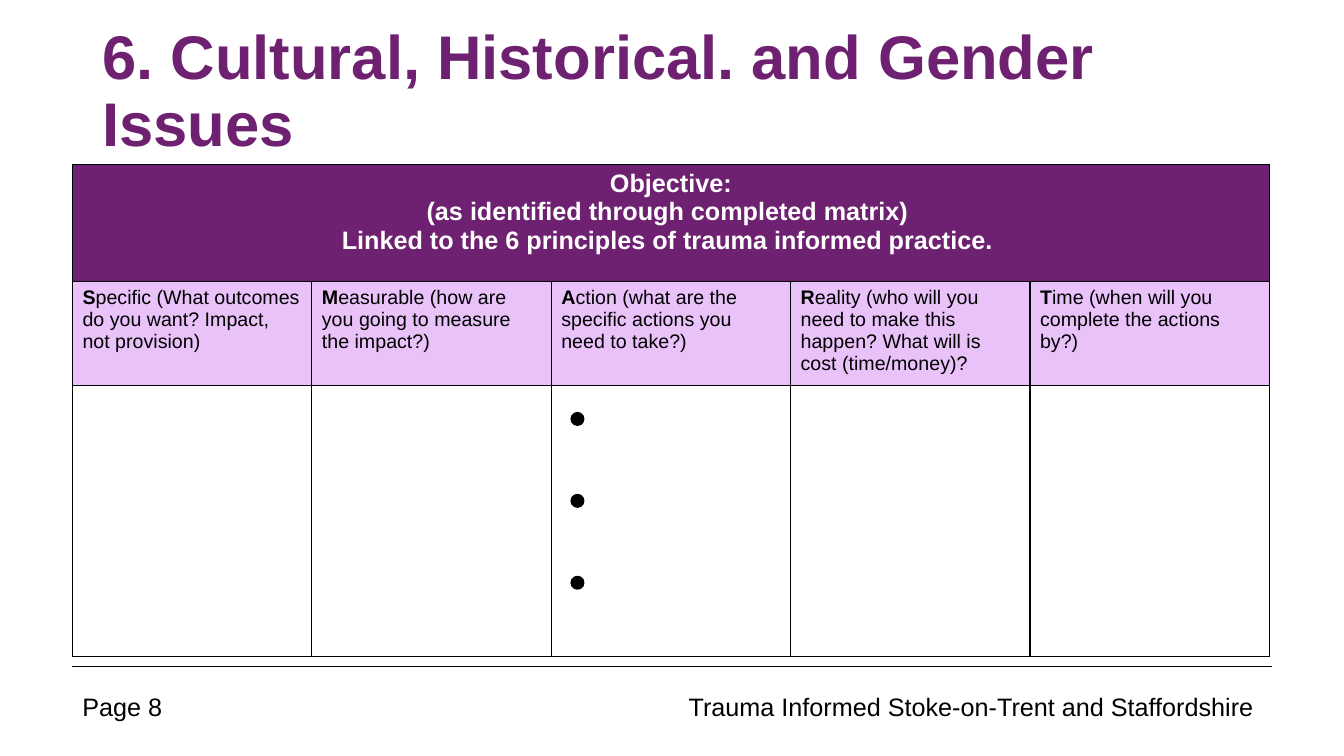
"""Build the SMART action plan slide for cultural, historical and gender issues."""
import pptx
import pptx.dml.color
import pptx.enum.shapes
import pptx.enum.text
import pptx.oxml
import pptx.oxml.ns
import pptx.util
import lxml.etree

PX = 9525
PURPLE = pptx.dml.color.RGBColor(0x6F, 0x21, 0x71)
LILAC = pptx.dml.color.RGBColor(0xEA, 0xC2, 0xFA)
WHITE = pptx.dml.color.RGBColor(0xFF, 0xFF, 0xFF)
BLACK = pptx.dml.color.RGBColor(0x00, 0x00, 0x00)
ALIGN = pptx.enum.text.PP_ALIGN
ANCHOR = pptx.enum.text.MSO_ANCHOR

LEFT, COLUMN_WIDTH = 69, 228
TABLE_TOP, ROW_HEIGHTS = 157, (111, 93, 258)
OBJECTIVE = (
    "Objective:\n(as identified through completed matrix) \n"
    "Linked to the 6 principles of trauma informed practice. "
)
SMART_HEADINGS = (
    "Specific (What outcomes do you want? Impact, not provision)",
    "Measurable (how are you going to measure the impact?)",
    "Action (what are the specific actions you need to take?)",
    "Reality (who will you need to make this happen? What will is cost (time/money)?",
    "Time (when will you complete the actions by?)",
)


def style_run(run, size, color, bold=False):
    run.font.name = "Arial"
    run.font.size = pptx.util.Pt(size)
    run.font.bold = bold
    run.font.color.rgb = color


presentation = pptx.Presentation()
presentation.slide_width = 1280 * PX
presentation.slide_height = 720 * PX
slide = presentation.slides.add_slide(presentation.slide_layouts[6])

footer_line = slide.shapes.add_connector(
    pptx.enum.shapes.MSO_CONNECTOR.STRAIGHT, LEFT * PX, 635 * PX, 1211 * PX, 635 * PX
)
footer_line.line.color.rgb = BLACK
footer_line.line.width = pptx.util.Pt(0.5)
lxml.etree.SubElement(footer_line._element.spPr, pptx.oxml.ns.qn("a:effectLst"))

for text, left, top, width, height, size, color, bold, align, anchor, spacing in (
    ("6. Cultural, Historical. and Gender Issues", 88, 19, 1104, 139,
     44, PURPLE, True, ALIGN.LEFT, ANCHOR.MIDDLE, 0.9),
    ("Page 8", LEFT, 654, 115, 38, 18, BLACK, False, ALIGN.LEFT, ANCHOR.TOP, 1.0),
    ("Trauma Informed Stoke-on-Trent and Staffordshire ", 640, 654, 570, 38,
     18, BLACK, False, ALIGN.RIGHT, ANCHOR.TOP, 1.0),
):
    box = slide.shapes.add_textbox(left * PX, top * PX, width * PX, height * PX)
    text_frame = box.text_frame
    text_frame.word_wrap = True
    text_frame.vertical_anchor = anchor
    text_frame.text = text
    paragraph = text_frame.paragraphs[0]
    paragraph.alignment = align
    paragraph.line_spacing = spacing
    style_run(paragraph.runs[0], size, color, bold)

column_count = len(SMART_HEADINGS)
table = slide.shapes.add_table(
    len(ROW_HEIGHTS), column_count, LEFT * PX, TABLE_TOP * PX,
    column_count * COLUMN_WIDTH * PX, sum(ROW_HEIGHTS) * PX
).table
for column in table.columns:
    column.width = COLUMN_WIDTH * PX

for row, height, fill in zip(table.rows, ROW_HEIGHTS, (PURPLE, LILAC, WHITE)):
    row.height = height * PX
    for cell in row.cells:
        cell_properties = cell._tc.get_or_add_tcPr()
        for side in ("lnL", "lnR", "lnT", "lnB"):
            cell_properties.append(pptx.oxml.parse_xml(
                f'<a:{side} {pptx.oxml.ns.nsdecls("a")} w="12700"><a:solidFill>'
                f'<a:srgbClr val="{BLACK}"/></a:solidFill></a:{side}>'
            ))
        cell.fill.solid()
        cell.fill.fore_color.rgb = fill

objective_cell = table.cell(0, 0)
objective_cell.merge(table.cell(0, column_count - 1))
objective_cell.text_frame.text = OBJECTIVE
for paragraph in objective_cell.text_frame.paragraphs:
    paragraph.alignment = ALIGN.CENTER
    style_run(paragraph.runs[0], 18, WHITE, True)

for column_index, heading in enumerate(SMART_HEADINGS):
    paragraph = table.cell(1, column_index).text_frame.paragraphs[0]
    for text, bold in ((heading[0], True), (heading[1:], False)):
        run = paragraph.add_run()
        run.text = text
        style_run(run, 14, BLACK, bold)

for index in range(3):
    action_dot = slide.shapes.add_shape(
        pptx.enum.shapes.MSO_SHAPE.FLOWCHART_CONNECTOR,
        544 * PX, (393 + 78 * index) * PX, 12 * PX, 12 * PX
    )
    action_dot.shadow.inherit = False
    action_dot.fill.solid()
    action_dot.fill.fore_color.rgb = BLACK
    action_dot.line.color.rgb = BLACK
    action_dot.line.width = pptx.util.Pt(1)

presentation.save("out.pptx")
